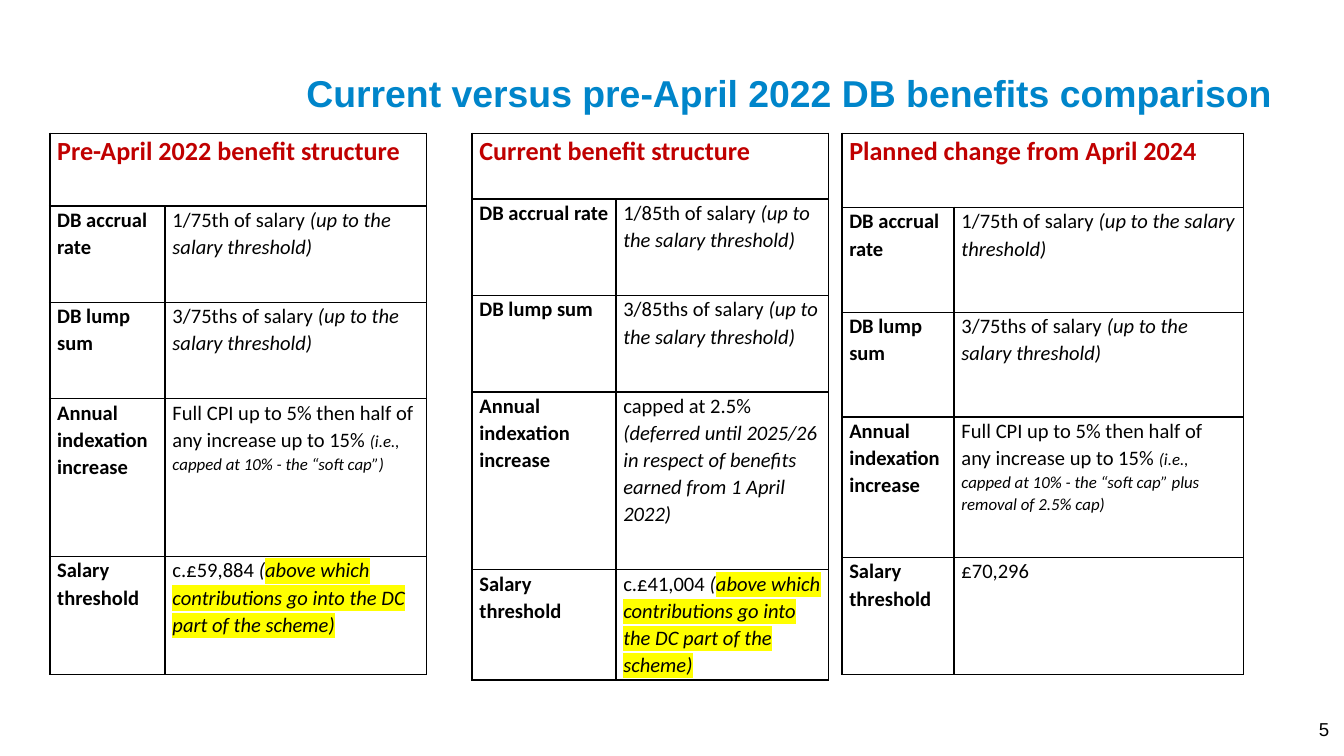
from lxml import etree
from pptx import Presentation
from pptx.dml.color import RGBColor
from pptx.enum.text import MSO_ANCHOR, PP_ALIGN
from pptx.oxml.ns import qn
from pptx.util import Cm, Pt

MIDDLE = MSO_ANCHOR.MIDDLE
RIGHT = PP_ALIGN.RIGHT
COLORS = {
    "title": "0085CA",
    "heading": "C00000",
    "text": "000000",
    "border": "000000",
    "highlight": "FFFF00",
}
LABELS = [
    "DB accrual rate",
    "DB lump sum",
    "Annual indexation increase",
    "Salary threshold",
]
THRESHOLD_LIMIT = ("(up to the salary threshold)", "italic")
INDEXATION = ("Full CPI up to 5% then half of any increase up to 15% ", "plain")
DC_NOTE = [
    ("(", "italic"),
    ("above which contributions go into the DC part of the scheme)", "marked"),
]
RUN_STYLES = {
    "heading": {"size": 14, "color": "heading", "bold": True},
    "label": {"bold": True},
    "plain": {},
    "italic": {"italic": True},
    "small": {"size": 9, "italic": True},
    "marked": {"italic": True, "highlight": "highlight"},
}
BENEFIT_TABLES = [
    {
        "heading": "Pre-April 2022 benefit structure",
        "box": (0.94, 2.52),
        "columns": (2.18, 4.94),
        "rows": (1.37, 1.82, 1.82, 2.98, 2.23),
        "values": [
            [("1/75th of salary ", "plain"), THRESHOLD_LIMIT],
            [("3/75ths of salary ", "plain"), THRESHOLD_LIMIT],
            [INDEXATION, ("(i.e., capped at 10% - the “soft cap”)", "small")],
            [("c.£59,884 ", "plain"), *DC_NOTE],
        ],
    },
    {
        "heading": "Current benefit structure",
        "box": (8.92, 2.52),
        "columns": (2.72, 4.02),
        "rows": (1.24, 1.82, 1.82, 3.36, 2.08),
        "values": [
            [("1/85th of salary ", "plain"), THRESHOLD_LIMIT],
            [("3/85ths of salary ", "plain"), THRESHOLD_LIMIT],
            [
                ("capped at 2.5% ", "plain"),
                ("(deferred until 2025/26 in respect of benefits earned from 1 April 2022)", "italic"),
            ],
            [("c.£41,004 ", "plain"), *DC_NOTE],
        ],
    },
    {
        "heading": "Planned change from April 2024",
        "box": (15.91, 2.52),
        "columns": (2.12, 5.47),
        "rows": (1.4, 1.98, 1.98, 2.65, 2.21),
        "values": [
            [("1/75th of salary ", "plain"), THRESHOLD_LIMIT],
            [("3/75ths of salary ", "plain"), THRESHOLD_LIMIT],
            [
                INDEXATION,
                ("(i.e., capped at 10% - the “soft cap” plus removal of 2.5% cap)", "small"),
            ],
            [("£70,296", "plain")],
        ],
    },
]


def format_run(run, font_name, size=11, color="text", bold=False, italic=False, highlight=None):
    font = run.font
    font.name = font_name
    font.size = Pt(size)
    font.bold = bold
    font.italic = italic
    font.color.rgb = RGBColor.from_string(COLORS[color])
    if highlight:
        mark = etree.Element(qn("a:highlight"))
        etree.SubElement(mark, qn("a:srgbClr"), val=COLORS[highlight])
        run.font._element.find(qn("a:solidFill")).addnext(mark)


def format_cell(cell):
    cell.fill.background()
    cell.margin_left = cell.margin_right = Cm(0.14)
    cell.margin_top = cell.margin_bottom = 0
    properties = cell._tc.get_or_add_tcPr()
    for index, side in enumerate(("lnL", "lnR", "lnT", "lnB")):
        line = etree.Element(qn(f"a:{side}"), w=str(Pt(1)))
        fill = etree.SubElement(line, qn("a:solidFill"))
        etree.SubElement(fill, qn("a:srgbClr"), val=COLORS["border"])
        properties.insert(index, line)


def write_cell(cell, parts):
    paragraph = cell.text_frame.paragraphs[0]
    paragraph.line_spacing = 1.07
    paragraph.space_after = Pt(8)
    for text, style in parts:
        run = paragraph.add_run()
        run.text = text
        format_run(run, "Calibri", **RUN_STYLES[style])


def add_benefit_table(slide, heading, box, columns, rows, values):
    left, top = box
    shape = slide.shapes.add_table(
        len(rows), len(columns), Cm(left), Cm(top), Cm(sum(columns)), Cm(sum(rows))
    )
    table = shape.table
    table.first_row = False
    table.horz_banding = False
    for column, width in zip(table.columns, columns):
        column.width = Cm(width)
    for row, height in zip(table.rows, rows):
        row.height = Cm(height)
    for cell in table.iter_cells():
        format_cell(cell)
    table.cell(0, 0).merge(table.cell(0, 1))
    write_cell(table.cell(0, 0), [(heading, "heading")])
    for row_index, (label, parts) in enumerate(zip(LABELS, values), 1):
        write_cell(table.cell(row_index, 0), [(label, "label")])
        write_cell(table.cell(row_index, 1), parts)


def add_text(slide, box, text):
    shape = slide.shapes.add_textbox(*map(Cm, box))
    text_frame = shape.text_frame
    text_frame.word_wrap = True
    text_frame.text = text
    return text_frame, text_frame.paragraphs[0]


def add_title(slide, box):
    text_frame, paragraph = add_text(
        slide, box, "Current versus pre-April 2022 DB benefits comparison"
    )
    text_frame.vertical_anchor = MIDDLE
    text_frame.margin_left = text_frame.margin_right = text_frame.margin_bottom = 0
    format_run(paragraph.runs[0], "Arial", size=20, color="title", bold=True)


def add_page_number(slide, box):
    _, paragraph = add_text(slide, box, "5")
    paragraph.alignment = RIGHT
    format_run(paragraph.runs[0], "Arial", size=10)


def main():
    presentation = Presentation()
    presentation.slide_width = Cm(25.4)
    presentation.slide_height = Cm(14.28)
    slide = presentation.slides.add_slide(presentation.slide_layouts[6])
    add_title(slide, (5.79, 0.79, 19.3, 1.78))
    for benefit_table in BENEFIT_TABLES:
        add_benefit_table(slide, **benefit_table)
    add_page_number(slide, (0, 13.44, 25.37, 0.69))
    presentation.save("out.pptx")


if __name__ == "__main__":
    main()
